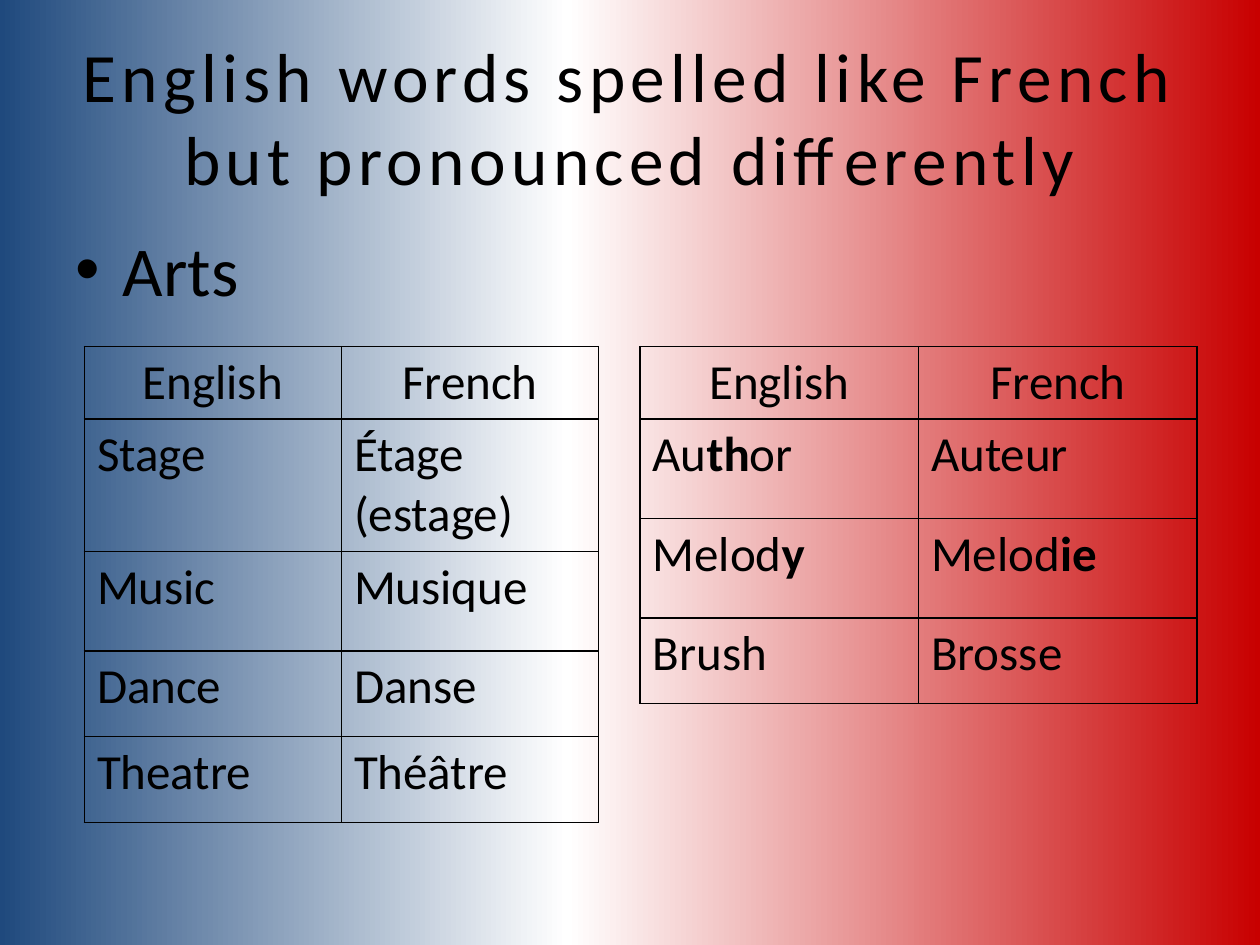
import pptx
import pptx.dml.color
import pptx.enum.text
import pptx.oxml
import pptx.oxml.ns
import pptx.util
import lxml.etree

Inches = pptx.util.Inches
Pt = pptx.util.Pt
qn = pptx.oxml.ns.qn
ALIGN = pptx.enum.text.PP_ALIGN
ANCHOR = pptx.enum.text.MSO_ANCHOR

BLACK = "000000"
STOPS = [(0, "1F497D"), (45, "FFFFFF"), (100, "C80000")]
HEADS = ("English", "French")
# Letters between asterisks are bold.
LEFT = [HEADS, ("Stage", "Étage\n(estage)"), ("Music", "Musique"),
        ("Dance", "Danse"), ("Theatre", "Théâtre")]
RIGHT = [HEADS, ("Au*th*or", "Auteur"), ("Melod*y*", "Melod*ie*"),
         ("Brush", "Brosse")]


def color(code):
    return pptx.dml.color.RGBColor.from_string(code)


def add_run(para, text, size, bold=False):
    run = para.add_run()
    run.text = text
    run.font.name = "Calibri"
    run.font.size = Pt(size)
    run.font.bold = bold
    run.font.color.rgb = color(BLACK)
    return run


def place(shape, left, top, width, height):
    shape.left, shape.top = Inches(left), Inches(top)
    shape.width, shape.height = Inches(width), Inches(height)
    shape.text_frame.auto_size = pptx.enum.text.MSO_AUTO_SIZE.NONE


def paint_back(slide):
    """Fill the background from left to right with the three stops."""
    fill = slide.background.fill
    fill.gradient()
    fill.gradient_angle = 0
    stops = slide.element.find(".//" + qn("a:gsLst"))
    for old in list(stops):
        stops.remove(old)
    for pos, code in STOPS:
        stop = lxml.etree.SubElement(stops, qn("a:gs"), pos=str(pos * 1000))
        lxml.etree.SubElement(stop, qn("a:srgbClr"), val=str(color(code)))


def set_title(slide, text):
    title = slide.shapes.title
    place(title, 0.5, 0.3, 9, 1.25)
    frame = title.text_frame
    frame.vertical_anchor = ANCHOR.MIDDLE
    para = frame.paragraphs[0]
    para.alignment = ALIGN.CENTER
    run = add_run(para, text, 39.6)
    run.font._element.set("spc", "300")


def set_list(slide, items):
    body = slide.placeholders[1]
    place(body, 0.5, 1.75, 9, 4.95)
    frame = body.text_frame
    for num, item in enumerate(items):
        para = frame.add_paragraph() if num else frame.paragraphs[0]
        add_run(para, item, 40)


def draw_edges(cell):
    props = cell._tc.get_or_add_tcPr()
    for num, side in enumerate("LRTB"):
        line = lxml.etree.Element(qn("a:ln" + side), w=str(Pt(1)))
        fill = lxml.etree.SubElement(line, qn("a:solidFill"))
        lxml.etree.SubElement(fill, qn("a:srgbClr"), val=BLACK)
        props.insert(num, line)


def fill_cell(cell, text, align):
    cell.fill.background()
    cell.vertical_anchor = ANCHOR.TOP
    draw_edges(cell)
    frame = cell.text_frame
    for num, line in enumerate(text.split("\n")):
        para = frame.add_paragraph() if num else frame.paragraphs[0]
        para.alignment = align
        for part, word in enumerate(line.split("*")):
            if word:
                add_run(para, word, 28, bold=part % 2 == 1)


def add_words(slide, rows, left, width, heights):
    frame = slide.shapes.add_table(
        len(rows), len(HEADS), Inches(left), Inches(2.75),
        Inches(width), Inches(sum(heights)))
    table = frame.table
    table.first_row = table.horz_banding = False
    for col in table.columns:
        col.width = Inches(width / len(HEADS))
    for row, (words, height) in enumerate(zip(rows, heights)):
        table.rows[row].height = Inches(height)
        align = ALIGN.LEFT if row else ALIGN.CENTER
        for col, word in enumerate(words):
            fill_cell(table.cell(row, col), word, align)


def main():
    deck = pptx.Presentation()
    deck.slide_width, deck.slide_height = Inches(10), Inches(7.5)
    slide = deck.slides.add_slide(deck.slide_layouts[1])
    paint_back(slide)
    set_title(slide, "English words spelled like French "
                     "but pronounced differently")
    set_list(slide, ["Arts"])
    heights = [0.56, 0.79, 0.79, 0.68, 0.68]
    add_words(slide, LEFT, 0.67, 4.08, heights)
    add_words(slide, RIGHT, 5.08, 4.42, heights[:len(RIGHT)])
    deck.save("out.pptx")


if __name__ == "__main__":
    main()
